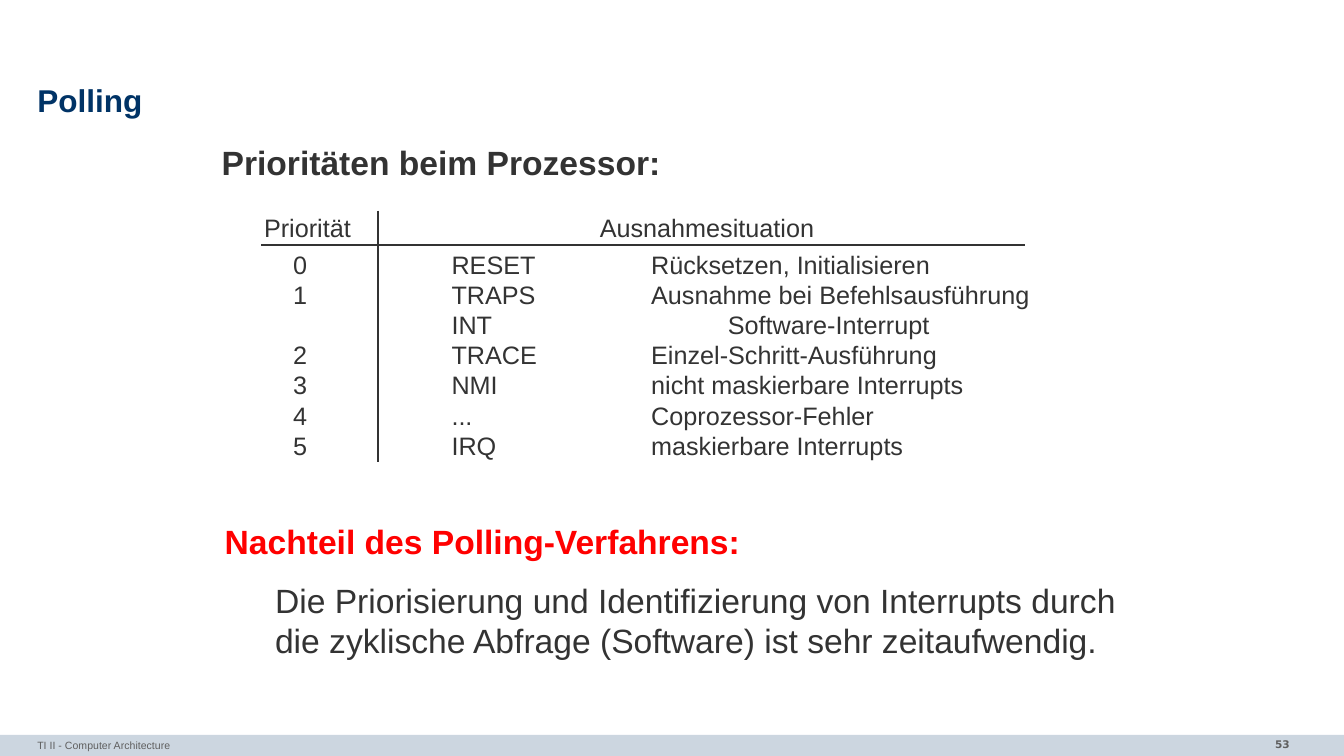
from lxml.etree import SubElement
from pptx import Presentation
from pptx.dml.color import RGBColor
from pptx.enum.shapes import MSO_CONNECTOR, MSO_SHAPE
from pptx.enum.text import MSO_ANCHOR, PP_ALIGN
from pptx.oxml.ns import qn
from pptx.util import Inches, Pt

NAVY, DARK, RED, GREY, BAND = "003366", "333333", "FF0000", "5F5F5F", "CCD6E0"

PRIORITIES = [
    ("0", "RESET", "Rücksetzen, Initialisieren"),
    ("1", "TRAPS", "Ausnahme bei Befehlsausführung"),
    ("", "INT", "Software-Interrupt"),
    ("2", "TRACE", "Einzel-Schritt-Ausführung"),
    ("3", "NMI", "nicht maskierbare Interrupts"),
    ("4", "...", "Coprozessor-Fehler"),
    ("5", "IRQ", "maskierbare Interrupts"),
]


def color(hex_text):
    return RGBColor.from_string(hex_text)


def add_box(slide, left, top, width, height, inset_x=0.1, inset_y=0.05, anchor=MSO_ANCHOR.TOP):
    """Add an empty wrapping text box and return its text frame."""
    shape = slide.shapes.add_textbox(Inches(left), Inches(top), Inches(width), Inches(height))
    frame = shape.text_frame
    frame.word_wrap = True
    frame.vertical_anchor = anchor
    frame.margin_left = frame.margin_right = Inches(inset_x)
    frame.margin_top = frame.margin_bottom = Inches(inset_y)
    return frame


def add_text(frame, text, size=18, fill=DARK, bold=False, font="Arial", align=PP_ALIGN.LEFT,
             indent=0, tabs=(), before=0, line_spacing=1.0):
    """Write one paragraph, using the frame's first one while it is empty."""
    paragraph = frame.paragraphs[0]
    if paragraph.runs:
        paragraph = frame.add_paragraph()
    paragraph.alignment = align
    paragraph.line_spacing = line_spacing
    paragraph.space_before = Pt(before)
    properties = paragraph._p.get_or_add_pPr()
    if indent:
        properties.set("marL", str(Inches(indent)))
    if tabs:
        tab_list = SubElement(properties, qn("a:tabLst"))
        for position in tabs:
            SubElement(tab_list, qn("a:tab"), pos=str(Inches(position)), algn="l")
    run = paragraph.add_run()
    run.text = text
    run.font.name = font
    run.font.size = Pt(size)
    run.font.bold = bold
    run.font.color.rgb = color(fill)


def add_rule(slide, x1, y1, x2, y2):
    line = slide.shapes.add_connector(
        MSO_CONNECTOR.STRAIGHT, Inches(x1), Inches(y1), Inches(x2), Inches(y2))
    line.line.color.rgb = color(DARK)
    line.line.width = Pt(1)
    SubElement(line._element.spPr, qn("a:effectLst"))


def add_title(slide, left, top, width, height):
    frame = add_box(slide, left, top, width, height, 0, 0, MSO_ANCHOR.MIDDLE)
    add_text(frame, "Polling", size=22.5, fill=NAVY, bold=True, line_spacing=0.85)


def add_footer(slide, left, top, width, height):
    band = slide.shapes.add_shape(
        MSO_SHAPE.RECTANGLE, Inches(left), Inches(top), Inches(width), Inches(height))
    band.shadow.inherit = False
    band.fill.solid()
    band.fill.fore_color.rgb = color(BAND)
    band.line.fill.background()
    number = add_box(slide, left + 11.1, top - 0.02, 1.79, 0.26)
    add_text(number, "53", size=7.5, fill=GREY, bold=True, font="DejaVu Sans",
             align=PP_ALIGN.RIGHT)
    course = add_box(slide, left + 0.37, top - 0.01, 8.72, 0.25, inset_x=0)
    add_text(course, "TI II - Computer Architecture", size=7.5, fill=GREY)


def add_priorities(slide, left, top, width, height):
    """Priority list set with tab stops, ruled below its head and after its first column."""
    frame = add_box(slide, left, top, width, height)
    add_text(frame, "Prioritäten beim Prozessor:", size=24, bold=True)
    add_text(frame, "Priorität\tAusnahmesituation", indent=0.42, tabs=[3.33], before=21.6)
    for index, row in enumerate(PRIORITIES):
        description_tab = 3.55 if row[0] else 4.31
        add_text(frame, "\t".join(row), indent=0.71, tabs=[1.57, description_tab],
                 line_spacing=1.0 if index else 1.2)
    add_rule(slide, left + 0.49, top + 1.07, left + 8.07, top + 1.07)
    add_rule(slide, left + 1.65, top + 0.73, left + 1.65, top + 3.22)


def add_drawback(slide, left, top, width, height):
    frame = add_box(slide, left, top, width, height)
    add_text(frame, "Nachteil des Polling-Verfahrens:", size=24, fill=RED, bold=True)
    add_text(frame, "Die Priorisierung und Identifizierung von Interrupts durch "
             "die zyklische Abfrage (Software) ist sehr zeitaufwendig.",
             size=24, indent=0.5, before=13)


def main():
    presentation = Presentation()
    presentation.slide_width = Inches(13.33)
    presentation.slide_height = Inches(7.5)
    slide = presentation.slides.add_slide(presentation.slide_layouts[6])
    add_footer(slide, 0, 7.29, 13.33, 0.21)
    add_title(slide, 0.37, 0.79, 12.6, 0.47)
    add_priorities(slide, 2.1, 1.36, 9.02, 3.26)
    add_drawback(slide, 2.13, 5.12, 9.13, 1.51)
    presentation.save("out.pptx")


if __name__ == "__main__":
    main()
